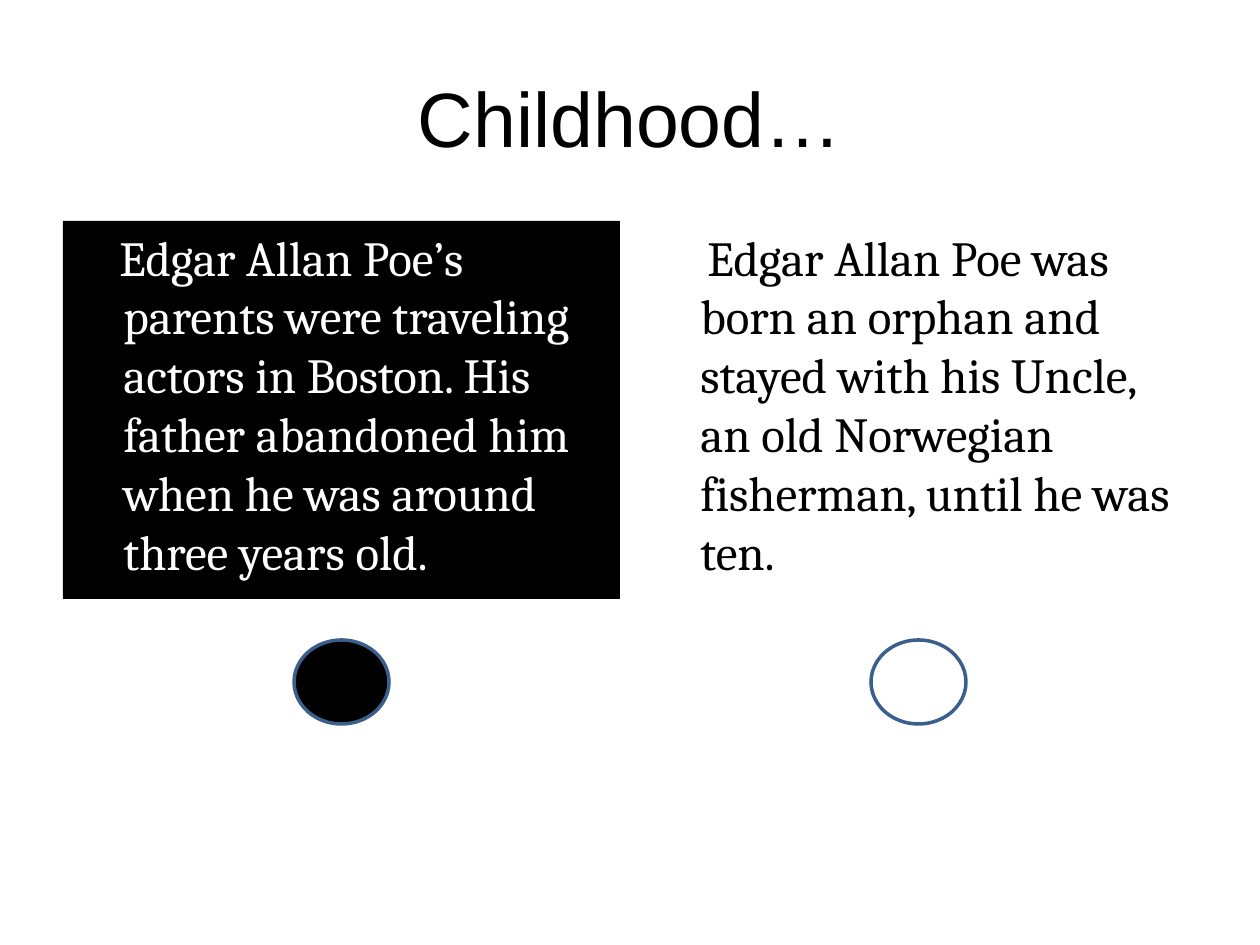
from pptx import Presentation
from pptx.dml.color import RGBColor
from pptx.enum.shapes import MSO_SHAPE
from pptx.enum.text import MSO_ANCHOR, PP_ALIGN
from pptx.util import Emu, Pt

RECTANGLE, OVAL = MSO_SHAPE.RECTANGLE, MSO_SHAPE.OVAL
TOP, MIDDLE = MSO_ANCHOR.TOP, MSO_ANCHOR.MIDDLE
LEFT, CENTER = PP_ALIGN.LEFT, PP_ALIGN.CENTER

BLACK = RGBColor(0x00, 0x00, 0x00)
WHITE = RGBColor(0xFF, 0xFF, 0xFF)
BLUE = RGBColor(0x3A, 0x5F, 0x8C)

PX_PER_INCH = 126
SLIDE_W, SLIDE_H = 1260, 945
MARGIN = 63
PANEL_W, PANEL_H, PANEL_TOP = 557, 378, 221
CIRCLE_W, CIRCLE_H, CIRCLE_TOP = 95, 84, 640
TEXT_INDENT = 48

TITLE_FONT = {"name": "Arial", "size": Pt(44)}
BODY_FONT = {"name": "Cambria", "size": Pt(28)}

# Text, fill, text colour, first-line offset in px
ACCOUNTS = [
    ("Edgar Allan Poe’s parents were traveling actors in Boston. "
     "His father abandoned him when he was around three years old.",
     BLACK, WHITE, -4),
    ("Edgar Allan Poe was born an orphan and stayed with his Uncle, "
     "an old Norwegian fisherman, until he was ten.",
     WHITE, BLACK, 7),
]


def px(length):
    return Emu(round(length * 914400 / PX_PER_INCH))


def write(shape, text, font, color, align, anchor):
    frame = shape.text_frame
    frame.word_wrap = True
    frame.vertical_anchor = anchor
    paragraph = frame.paragraphs[0]
    paragraph.alignment = align
    run = paragraph.add_run()
    run.text = text
    for attribute, value in font.items():
        setattr(run.font, attribute, value)
    run.font.color.rgb = color
    return paragraph


def add_filled(slide, kind, left, top, width, height, fill):
    shape = slide.shapes.add_shape(kind, px(left), px(top), px(width), px(height))
    shape.shadow.inherit = False
    shape.fill.solid()
    shape.fill.fore_color.rgb = fill
    return shape


def add_title(slide, text):
    title = slide.shapes.add_textbox(
        px(MARGIN), px(38), px(SLIDE_W - 2 * MARGIN), px(158))
    write(title, text, TITLE_FONT, BLACK, CENTER, MIDDLE)


def add_panel(slide, left, text, fill, color, first_line):
    panel = add_filled(slide, RECTANGLE, left, PANEL_TOP, PANEL_W, PANEL_H, fill)
    panel.line.fill.background()
    paragraph = write(panel, text, BODY_FONT, color, LEFT, TOP)
    properties = paragraph._p.get_or_add_pPr()
    properties.set("marL", str(px(TEXT_INDENT)))
    properties.set("indent", str(px(first_line)))


def add_circle(slide, center, fill):
    circle = add_filled(slide, OVAL, center - CIRCLE_W / 2, CIRCLE_TOP,
                        CIRCLE_W, CIRCLE_H, fill)
    circle.line.color.rgb = BLUE
    circle.line.width = Pt(2)


def main():
    presentation = Presentation()
    presentation.slide_width = px(SLIDE_W)
    presentation.slide_height = px(SLIDE_H)
    slide = presentation.slides.add_slide(presentation.slide_layouts[6])

    add_title(slide, "Childhood…")

    # Two accounts side by side, each with a circle centred below
    panel_lefts = (MARGIN, SLIDE_W - MARGIN - PANEL_W)
    for left, (text, fill, color, first_line) in zip(panel_lefts, ACCOUNTS):
        add_panel(slide, left, text, fill, color, first_line)
        add_circle(slide, left + PANEL_W / 2, fill)

    presentation.save("out.pptx")


if __name__ == "__main__":
    main()
